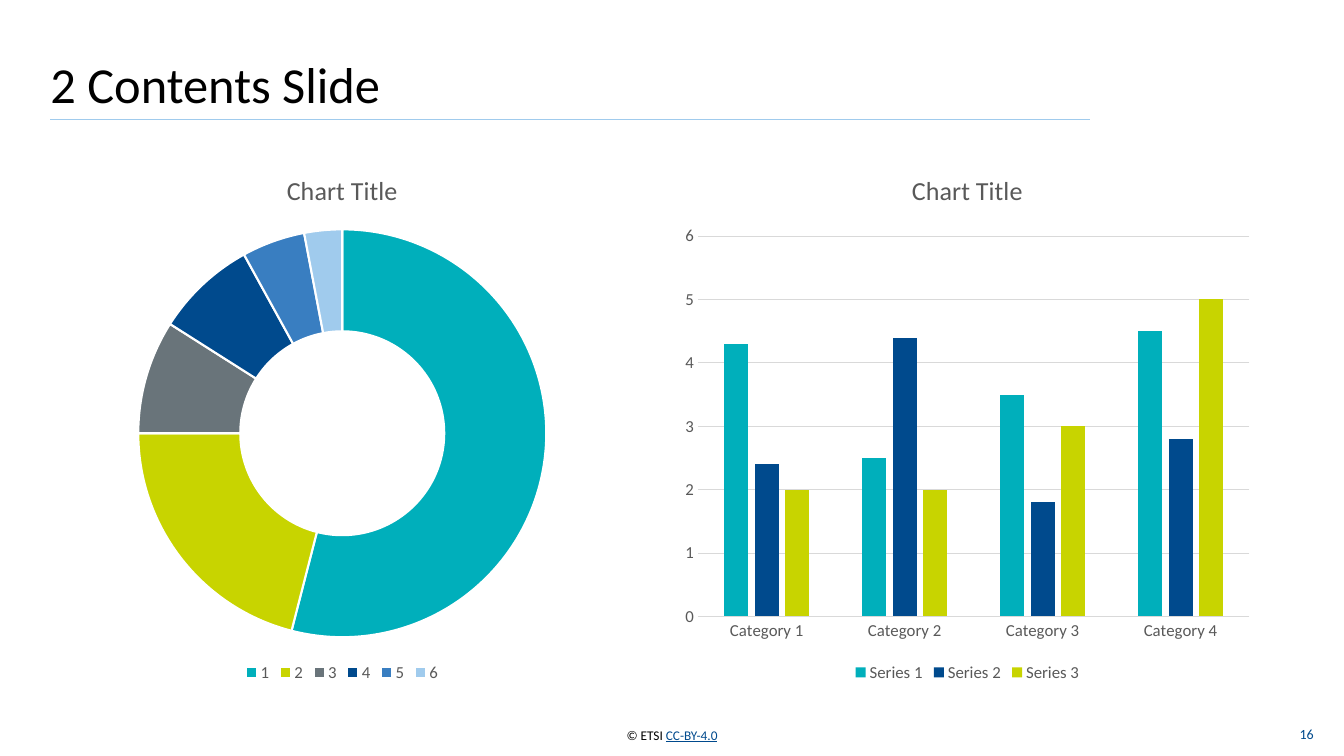
from dataclasses import dataclass

from lxml.etree import SubElement
from pptx import Presentation
from pptx.chart.data import CategoryChartData
from pptx.dml.color import RGBColor
from pptx.enum.chart import XL_CHART_TYPE, XL_LEGEND_POSITION, XL_TICK_MARK
from pptx.enum.shapes import MSO_CONNECTOR
from pptx.enum.text import MSO_ANCHOR, PP_ALIGN
from pptx.oxml.ns import qn
from pptx.util import Inches, Pt


@dataclass(frozen=True)
class Theme:
    font: str = "Calibri"
    black: str = "000000"
    white: str = "FFFFFF"
    text_grey: str = "595959"
    grid_grey: str = "D9D9D9"
    teal: str = "00AFBB"
    lime: str = "C8D400"
    slate: str = "69747A"
    navy: str = "004A8D"
    blue: str = "397EC1"
    sky: str = "A0CBED"
    title_size: float = 36
    chart_title_size: float = 18.6
    chart_text_size: float = 12
    chart_base_size: float = 10
    number_size: float = 10
    footer_size: float = 9.5


THEME = Theme()


def style_font(font, size, color):
    font.name = THEME.font
    font.size = Pt(size)
    font.bold = False
    font.color.rgb = RGBColor.from_string(color)


def add_titled_chart(kind, left, width, data):
    """Add a chart with the title, legend and type styles both charts share."""
    chart = slide.shapes.add_chart(
        kind, Inches(left), Inches(1.5), Inches(width), Inches(5.31), data
    ).chart
    style_font(chart.font, THEME.chart_base_size, THEME.black)
    chart.has_title = True
    heading = chart.chart_title.text_frame.paragraphs[0].add_run()
    heading.text = "Chart Title"
    style_font(heading.font, THEME.chart_title_size, THEME.text_grey)
    chart.chart_title.include_in_layout = False
    chart.has_legend = True
    chart.legend.position = XL_LEGEND_POSITION.BOTTOM
    chart.legend.include_in_layout = False
    style_font(chart.legend.font, THEME.chart_text_size, THEME.text_grey)
    return chart


prs = Presentation()
prs.slide_width = Inches(13.33)
prs.slide_height = Inches(7.5)
slide = prs.slides.add_slide(prs.slide_layouts[5])

# Title and rule
title = slide.shapes.title
title.left, title.top = Inches(0.5), Inches(0.57)
title.width, title.height = Inches(10.91), Inches(0.57)
title_frame = title.text_frame
title_frame.vertical_anchor = MSO_ANCHOR.BOTTOM
title_frame.margin_left = title_frame.margin_right = 0
title_frame.margin_top = title_frame.margin_bottom = 0
title_line = title_frame.paragraphs[0]
title_line.alignment = PP_ALIGN.LEFT
title_line.line_spacing = 0.9
title_run = title_line.add_run()
title_run.text = "2 Contents Slide"
style_font(title_run.font, THEME.title_size, THEME.black)

rule = slide.shapes.add_connector(
    MSO_CONNECTOR.STRAIGHT, Inches(0.5), Inches(1.19), Inches(10.81), Inches(1.19)
)
rule.line.color.rgb = RGBColor.from_string(THEME.sky)
rule.line.width = Pt(0.75)
SubElement(rule._element.spPr, qn("a:effectLst"))

# Copyright line and slide number: box, alignment, anchor, size, runs
footers = [
    ((6.14, 7.21, 1.05, 0.16), PP_ALIGN.CENTER, MSO_ANCHOR.TOP, THEME.footer_size,
     [("© ETSI ", THEME.black, False), ("CC-BY-4.0", THEME.navy, True)]),
    ((12.64, 7.15, 0.39, 0.26), PP_ALIGN.RIGHT, MSO_ANCHOR.MIDDLE, THEME.number_size,
     [("16", THEME.navy, False)]),
]
for box, alignment, anchor, size, pieces in footers:
    frame = slide.shapes.add_textbox(*map(Inches, box)).text_frame
    frame.margin_left = frame.margin_right = 0
    frame.margin_top = frame.margin_bottom = 0
    frame.vertical_anchor = anchor
    line = frame.paragraphs[0]
    line.alignment = alignment
    for words, color, underlined in pieces:
        run = line.add_run()
        run.text = words
        style_font(run.font, size, color)
        run.font.underline = underlined

# Doughnut chart
share_data = CategoryChartData()
share_data.categories = ["1", "2", "3", "4", "5", "6"]
share_data.add_series("Chart Title", (54, 21, 9, 8, 5, 3))
doughnut = add_titled_chart(XL_CHART_TYPE.DOUGHNUT, 0.5, 5.79, share_data)
ring = doughnut.plots[0]
ring.vary_by_categories = True
ring._element.find(qn("c:holeSize")).set("val", "87")
slice_colors = [THEME.teal, THEME.lime, THEME.slate, THEME.navy, THEME.blue, THEME.sky]
for index, color in enumerate(slice_colors):
    segment = ring.series[0].points[index].format
    segment.fill.solid()
    segment.fill.fore_color.rgb = RGBColor.from_string(color)
    segment.line.color.rgb = RGBColor.from_string(THEME.white)
    segment.line.width = Pt(1.5)

# Column chart
series_rows = [
    ("Series 1", (4.3, 2.5, 3.5, 4.5), THEME.teal),
    ("Series 2", (2.4, 4.4, 1.8, 2.8), THEME.navy),
    ("Series 3", (2, 2, 3, 5), THEME.lime),
]
column_data = CategoryChartData()
column_data.categories = [f"Category {number}" for number in range(1, 5)]
for name, values, _ in series_rows:
    column_data.add_series(name, values)
columns = add_titled_chart(XL_CHART_TYPE.COLUMN_CLUSTERED, 6.68, 5.83, column_data)
bars = columns.plots[0]
bars.vary_by_categories = False
bars.gap_width = 219
bars.overlap = -27
for series, (_, _, color) in zip(bars.series, series_rows):
    series.format.fill.solid()
    series.format.fill.fore_color.rgb = RGBColor.from_string(color)

category_axis, value_axis = columns.category_axis, columns.value_axis
for axis in (category_axis, value_axis):
    axis.major_tick_mark = axis.minor_tick_mark = XL_TICK_MARK.NONE
    style_font(axis.tick_labels.font, THEME.chart_text_size, THEME.text_grey)
value_axis.minimum_scale, value_axis.maximum_scale = 0, 6
value_axis.major_unit = 1
value_axis.format.line.fill.background()
value_axis.has_major_gridlines = True
for guide in (category_axis.format.line, value_axis.major_gridlines.format.line):
    guide.color.rgb = RGBColor.from_string(THEME.grid_grey)
    guide.width = Pt(0.75)

prs.save("out.pptx")
